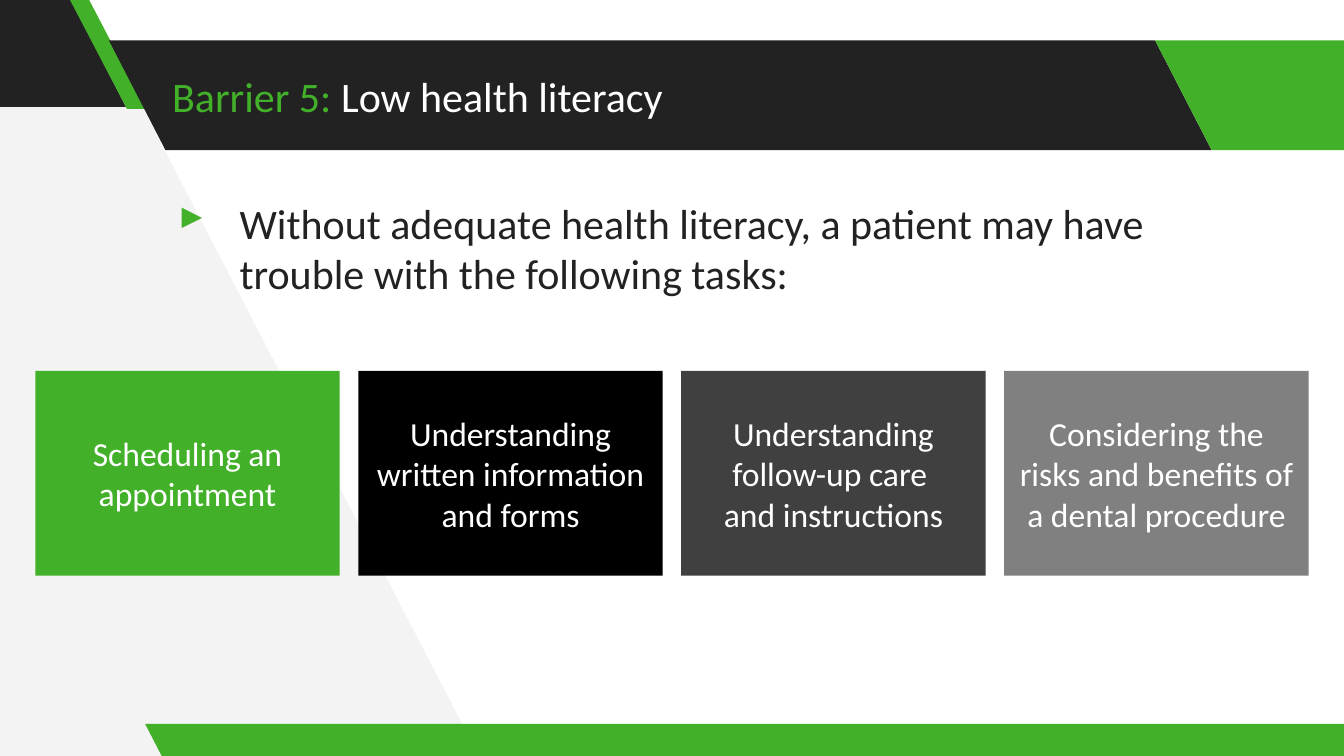
from lxml import etree
from pptx import Presentation
from pptx.dml.color import RGBColor
from pptx.enum.shapes import MSO_SHAPE as Shape
from pptx.enum.text import MSO_ANCHOR as Anchor, PP_ALIGN as Align
from pptx.oxml.ns import qn
from pptx.util import Pt

# Content
TITLE = [("Barrier 5: ", "green"), ("Low health literacy", "white")]
INTRO = "Without adequate health literacy, a patient may have trouble with the following tasks:"
TASKS = [
    ("Scheduling an appointment", "green"),
    ("Understanding written information and forms", "black"),
    ("Understanding follow-up care \vand instructions", "charcoal"),
    ("Considering the risks and benefits of a dental procedure", "gray"),
]

# Style
FONT = "Calibri"
COLORS = {
    "green": RGBColor(0x43, 0xB0, 0x2A),
    "dark": RGBColor(0x22, 0x22, 0x22),
    "pale": RGBColor(0xF3, 0xF3, 0xF3),
    "white": RGBColor(0xFF, 0xFF, 0xFF),
    "black": RGBColor(0x00, 0x00, 0x00),
    "charcoal": RGBColor(0x40, 0x40, 0x40),
    "gray": RGBColor(0x80, 0x80, 0x80),
}

# Layout in points
WIDTH, HEIGHT = 960, 540
BAND_TOP, BAND_HEIGHT = 28.8, 78.5
TEXT_LEFT = 115.9
WEDGE = [(342, 540), (59.8, -4.3), (-5.8, -3.6), (-2.2, 543.6)]
BANDS = [  # left, top, width, height, slant, color
    (-95, -2.2, 185, BAND_HEIGHT, 0.515, "dark"),
    (49.7, -0.7, 54.7, BAND_HEIGHT, 0.75, "green"),
    (77.8, BAND_TOP, 787.7, BAND_HEIGHT, 0.515, "dark"),
    (825.1, BAND_TOP, 185, BAND_HEIGHT, 0.515, "green"),
    (103.7, 517, 878.4, 23.8, 0.515, "green"),
]
CARD_LEFT, CARD_TOP, CARD_WIDTH, CARD_HEIGHT = 25.2, 265, 217.5, 146.2
CARD_PITCH = 230.7


def paint(shape, color):
    shape.shadow.inherit = False
    shape.fill.solid()
    shape.fill.fore_color.rgb = COLORS[color]
    shape.line.fill.background()


def add_filled(slide, kind, box, color):
    shape = slide.shapes.add_shape(kind, *map(Pt, box))
    paint(shape, color)
    return shape


def set_frame(shape, inset, anchor):
    frame = shape.text_frame
    frame.word_wrap = True
    frame.vertical_anchor = anchor
    frame.margin_left = frame.margin_right = Pt(inset)
    frame.margin_top = frame.margin_bottom = Pt(inset)
    return frame


def format_run(run, size, color):
    run.font.name = FONT
    run.font.size = Pt(size)
    run.font.color.rgb = COLORS[color]


def add_bullet(paragraph, character, color):
    properties = paragraph._p.get_or_add_pPr()
    properties.set("marL", str(Pt(48.2)))
    properties.set("indent", str(Pt(-43.9)))
    bullet_color = etree.SubElement(properties, qn("a:buClr"))
    etree.SubElement(bullet_color, qn("a:srgbClr"), val=str(COLORS[color]))
    etree.SubElement(properties, qn("a:buChar"), char=character)


def main():
    presentation = Presentation()
    presentation.slide_width, presentation.slide_height = Pt(WIDTH), Pt(HEIGHT)
    slide = presentation.slides.add_slide(presentation.slide_layouts[6])

    # Background wedge and slanted bands
    start, *corners = [(Pt(x), Pt(y)) for x, y in WEDGE]
    builder = slide.shapes.build_freeform(*start)
    builder.add_line_segments(corners, close=True)
    paint(builder.convert_to_shape(), "pale")
    for *box, slant, color in BANDS:
        band = add_filled(slide, Shape.PARALLELOGRAM, box, color)
        band.adjustments[0] = slant
        band.element.spPr.find(qn("a:xfrm")).set("flipH", "1")

    # Title
    title = slide.shapes.add_textbox(Pt(TEXT_LEFT), Pt(BAND_TOP), Pt(706.3), Pt(BAND_HEIGHT))
    paragraph = set_frame(title, 7.2, Anchor.MIDDLE).paragraphs[0]
    for text, color in TITLE:
        run = paragraph.add_run()
        run.text = text
        format_run(run, 30, color)

    # Introduction
    intro = slide.shapes.add_textbox(Pt(TEXT_LEFT), Pt(133.9), Pt(796.3), Pt(383))
    frame = set_frame(intro, 7.2, Anchor.TOP)
    frame.text = INTRO
    paragraph = frame.paragraphs[0]
    paragraph.space_before = Pt(8)
    add_bullet(paragraph, "▸", "green")
    format_run(paragraph.runs[0], 30, "dark")

    # Task cards
    for index, (text, color) in enumerate(TASKS):
        box = (CARD_LEFT + index * CARD_PITCH, CARD_TOP, CARD_WIDTH, CARD_HEIGHT)
        card = add_filled(slide, Shape.RECTANGLE, box, color)
        frame = set_frame(card, 9.4, Anchor.MIDDLE)
        frame.text = text
        paragraph = frame.paragraphs[0]
        paragraph.alignment = Align.CENTER
        for run in paragraph.runs:
            format_run(run, 24, "white")

    presentation.save("out.pptx")


if __name__ == "__main__":
    main()
